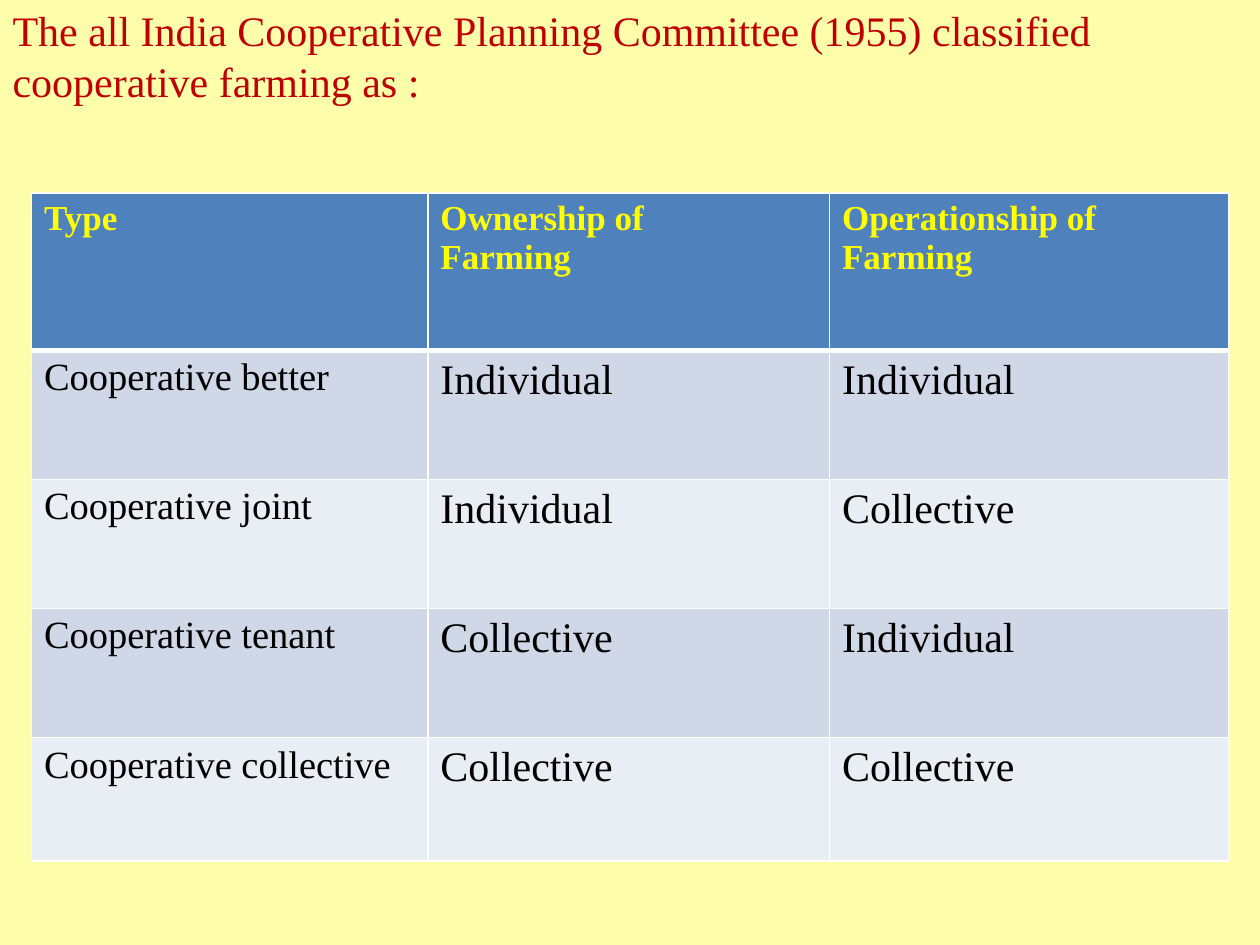
"""Build a slide that classifies cooperative farming by ownership and operation."""
from lxml.etree import SubElement
from pptx import Presentation
from pptx.dml.color import RGBColor
from pptx.enum.text import MSO_ANCHOR as Anchor, MSO_AUTO_SIZE as AutoSize, PP_ALIGN as Align
from pptx.oxml.ns import qn
from pptx.util import Pt

HEADING = "The all India Cooperative Planning Committee (1955) classified cooperative farming as :"
HEADERS = ("Type", "Ownership of\nFarming", "Operationship of\nFarming")
FARMING_TYPES = (
    ("Cooperative better", "Individual", "Individual"),
    ("Cooperative joint", "Individual", "Collective"),
    ("Cooperative tenant", "Collective", "Individual"),
    ("Cooperative collective", "Collective", "Collective"),
)
COLUMN_WIDTHS = (226.5, 229.5, 228)
ROW_HEIGHTS = (90, 73.75, 73.75, 73.75, 70.5)
TABLE_LEFT, TABLE_TOP = 18, 110.25
BANDS = ("E9EDF4", "D0D8E8")
FONT = "Times New Roman"


def colour(hex_code):
    return RGBColor.from_string(hex_code)


def style_text(frame, size, hex_code, bold=False):
    for paragraph in frame.paragraphs:
        for run in paragraph.runs:
            run.font.name, run.font.size, run.font.bold = FONT, Pt(size), bold
            run.font.color.rgb = colour(hex_code)


def add_borders(cell, bottom, top):
    properties = cell._tc.get_or_add_tcPr()
    widths = {"a:lnL": 1, "a:lnR": 1, "a:lnT": top, "a:lnB": bottom}
    for position, (side, width) in enumerate(widths.items()):
        line = SubElement(properties, qn(side), w=str(Pt(width)))
        fill = SubElement(line, qn("a:solidFill"))
        SubElement(fill, qn("a:srgbClr"), val="FFFFFF")
        properties.insert(position, line)


def add_heading(slide):
    heading = slide.shapes.title
    heading.left, heading.top, heading.width, heading.height = Pt(0), Pt(0), Pt(720), Pt(64)
    frame = heading.text_frame
    frame.text = HEADING
    frame.auto_size = AutoSize.NONE
    frame.vertical_anchor = Anchor.BOTTOM
    frame.paragraphs[0].alignment = Align.LEFT
    style_text(frame, 24, "C00000")


def add_classification(slide):
    rows = (HEADERS, *FARMING_TYPES)
    table = slide.shapes.add_table(
        len(rows), len(HEADERS), Pt(TABLE_LEFT), Pt(TABLE_TOP),
        Pt(sum(COLUMN_WIDTHS)), Pt(sum(ROW_HEIGHTS))).table
    for column, width in zip(table.columns, COLUMN_WIDTHS):
        column.width = Pt(width)
    for row, height in zip(table.rows, ROW_HEIGHTS):
        row.height = Pt(height)
    for r, texts in enumerate(rows):
        for c, text in enumerate(texts):
            cell = table.cell(r, c)
            cell.text_frame.text = text
            cell.fill.solid()
            cell.fill.fore_color.rgb = colour(BANDS[r % 2] if r else "4F81BD")
            add_borders(cell, bottom=1 if r else 3, top=3 if r == 1 else 1)
            if r == 0:
                style_text(cell.text_frame, 20, "FFFF00", bold=True)
            else:
                style_text(cell.text_frame, 24 if c else 22, "000000")


def main():
    deck = Presentation()
    deck.slide_width, deck.slide_height = Pt(720), Pt(540)
    slide = deck.slides.add_slide(deck.slide_layouts[5])
    slide.background.fill.solid()
    slide.background.fill.fore_color.rgb = colour("FFFFAB")
    add_heading(slide)
    add_classification(slide)
    deck.save("out.pptx")


if __name__ == "__main__":
    main()
